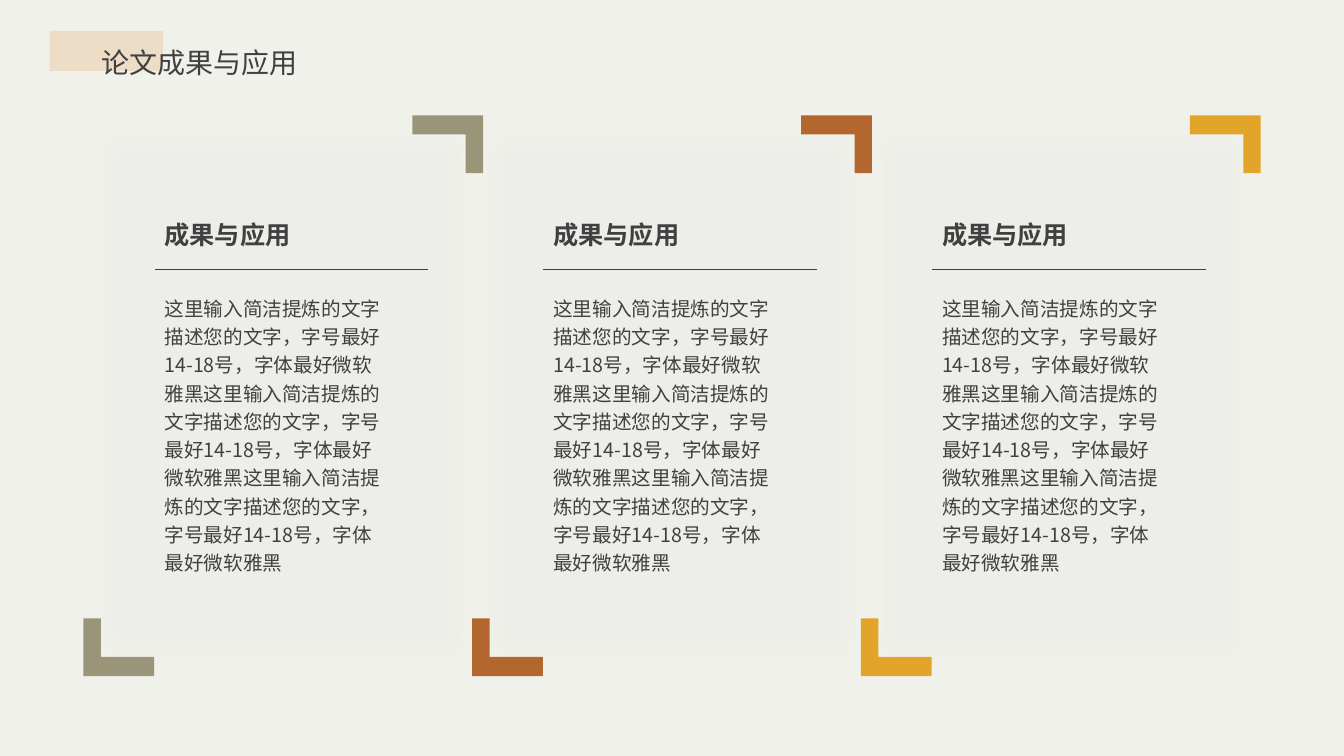
"""Build the three-card slide on thesis results and applications."""
from lxml import etree
from pptx import Presentation
from pptx import util as u
from pptx.dml.color import RGBColor
from pptx.enum import shapes, text
from pptx.oxml import ns

TITLE = "论文成果与应用"
SENTENCE = "这里输入简洁提炼的文字描述您的文字，字号最好14-18号，字体最好微软雅黑"
CARDS = [
    ("成果与应用", SENTENCE * 3, "olive"),
    ("成果与应用", SENTENCE * 3, "rust"),
    ("成果与应用", SENTENCE * 3, "gold"),
]
THEME = {
    "font": "Noto Sans CJK SC",
    "colors": {"back": "F1F1EB", "accent": "EDDDC6", "card": "F2F2F2", "ink": "404040",
               "shadow": "000000", "olive": "9A9479", "rust": "B3672E", "gold": "E2A52A"},
    "sizes": {"title": 20, "heading": 18, "body": 14},
}
PAGE = (960, 540)
CARD_LEFT, CARD_TOP, CARD_W, CARD_H = 78.5, 103, 247.7, 359.3
PITCH = 277.7
CORNER_W, CORNER_H, CORNER_ARMS = 50.5, 41.3, (0.33, 0.301)
CORNER_OUT_X, CORNER_OUT_Y = 18.9, 20.6
TEXT_INDENT, RULE_Y, RULE_W = 31.9, 192.2, 195.5
SHAPE = shapes.MSO_SHAPE
JUSTIFY = text.PP_ALIGN.JUSTIFY


def color(name):
    return RGBColor.from_string(THEME["colors"][name])


def add_block(s, kind, box, fill, rotation=0, arms=()):
    sp = s.shapes.add_shape(kind, *map(u.Pt, box))
    sp.shadow.inherit = False
    sp.fill.solid()
    sp.fill.fore_color.rgb = color(fill)
    sp.line.fill.background()
    sp.rotation = rotation
    for i, arm in enumerate(arms):
        sp.adjustments[i] = arm
    return sp


def add_card(s, box):
    sp = add_block(s, SHAPE.RECTANGLE, box, "card")
    pr = sp._element.spPr
    clr = pr.find(ns.qn("a:solidFill")).find(ns.qn("a:srgbClr"))
    etree.SubElement(clr, ns.qn("a:alpha"), val="27000")
    glow = etree.SubElement(pr.find(ns.qn("a:effectLst")), ns.qn("a:outerShdw"),
                            blurRad=str(u.Pt(13)), dist="0", dir="0",
                            algn="ctr", rotWithShape="0")
    clr = etree.SubElement(glow, ns.qn("a:srgbClr"), val=THEME["colors"]["shadow"])
    etree.SubElement(clr, ns.qn("a:alpha"), val="8000")


def add_text(s, box, words, size, bold=False, **paragraph):
    tf = s.shapes.add_textbox(*map(u.Pt, box)).text_frame
    tf.word_wrap = True
    tf.auto_size = text.MSO_AUTO_SIZE.SHAPE_TO_FIT_TEXT
    p = tf.paragraphs[0]
    for key, value in paragraph.items():
        setattr(p, key, value)
    r = p.add_run()
    r.text = words
    style = {"size": u.Pt(THEME["sizes"][size]), "name": THEME["font"], "bold": bold}
    for key, value in style.items():
        setattr(r.font, key, value)
    r.font.color.rgb = color("ink")
    etree.SubElement(r._r.get_or_add_rPr(), ns.qn("a:ea"), typeface=THEME["font"])


def add_rule(s, x, y, width):
    ln = s.shapes.add_connector(shapes.MSO_CONNECTOR.STRAIGHT,
                                *map(u.Pt, (x, y, x + width, y)))
    ln.line.color.rgb = color("ink")
    ln.line.width = u.Pt(0.5)
    etree.SubElement(ln._element.spPr, ns.qn("a:effectLst"))


def add_column(s, left, heading, body, accent):
    add_card(s, (left, CARD_TOP, CARD_W, CARD_H))
    corners = [
        (left - CORNER_OUT_X, CARD_TOP + CARD_H + CORNER_OUT_Y - CORNER_H, 0),
        (left + CARD_W + CORNER_OUT_X - CORNER_W, CARD_TOP - CORNER_OUT_Y, 180),
    ]
    for x, y, rotation in corners:
        add_block(s, SHAPE.CORNER, (x, y, CORNER_W, CORNER_H), accent, rotation, CORNER_ARMS)
    x = left + TEXT_INDENT
    add_text(s, (x, 205.2, 173.5, 229.7), body, "body", line_spacing=1.2)
    add_text(s, (x, 153.4, 173.5, 29), heading, "heading", True, alignment=JUSTIFY)
    add_rule(s, x, RULE_Y, RULE_W)


def main():
    prs = Presentation()
    prs.slide_width, prs.slide_height = map(u.Pt, PAGE)
    s = prs.slides.add_slide(prs.slide_layouts[6])
    s.background.fill.solid()
    s.background.fill.fore_color.rgb = color("back")
    add_block(s, SHAPE.RECTANGLE, (35.5, 22, 81, 28.7), "accent")
    add_text(s, (65.5, 17.3, 252, 39.6), TITLE, "title", alignment=JUSTIFY, line_spacing=1.5)
    for i, card in enumerate(CARDS):
        add_column(s, CARD_LEFT + i * PITCH, *card)
    prs.save("out.pptx")


if __name__ == "__main__":
    main()
